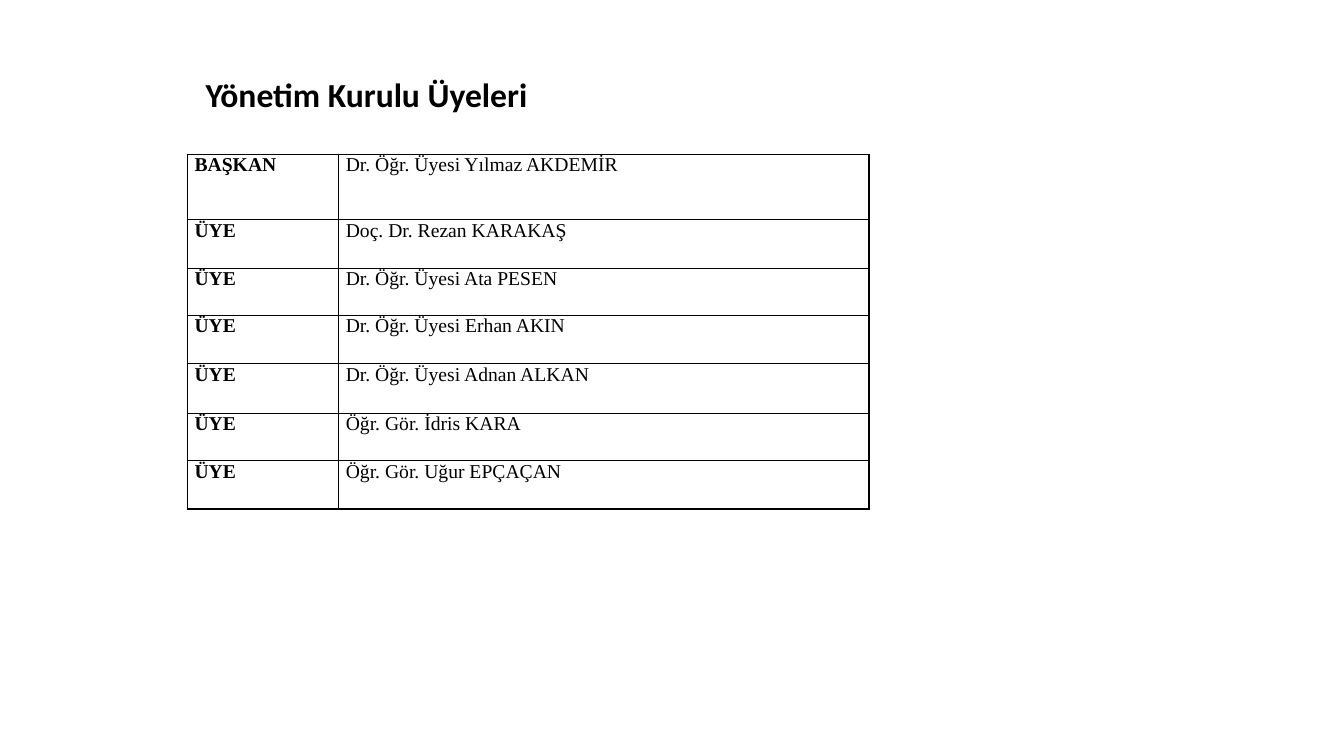
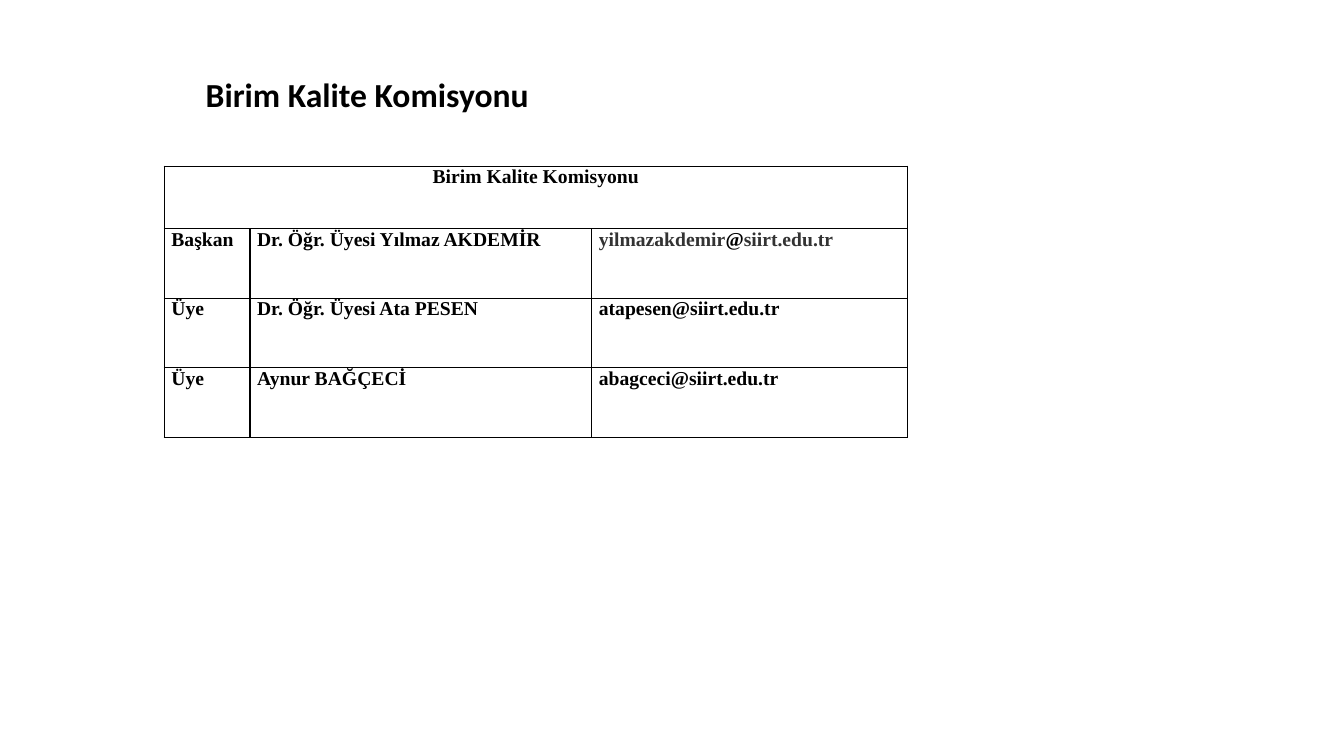
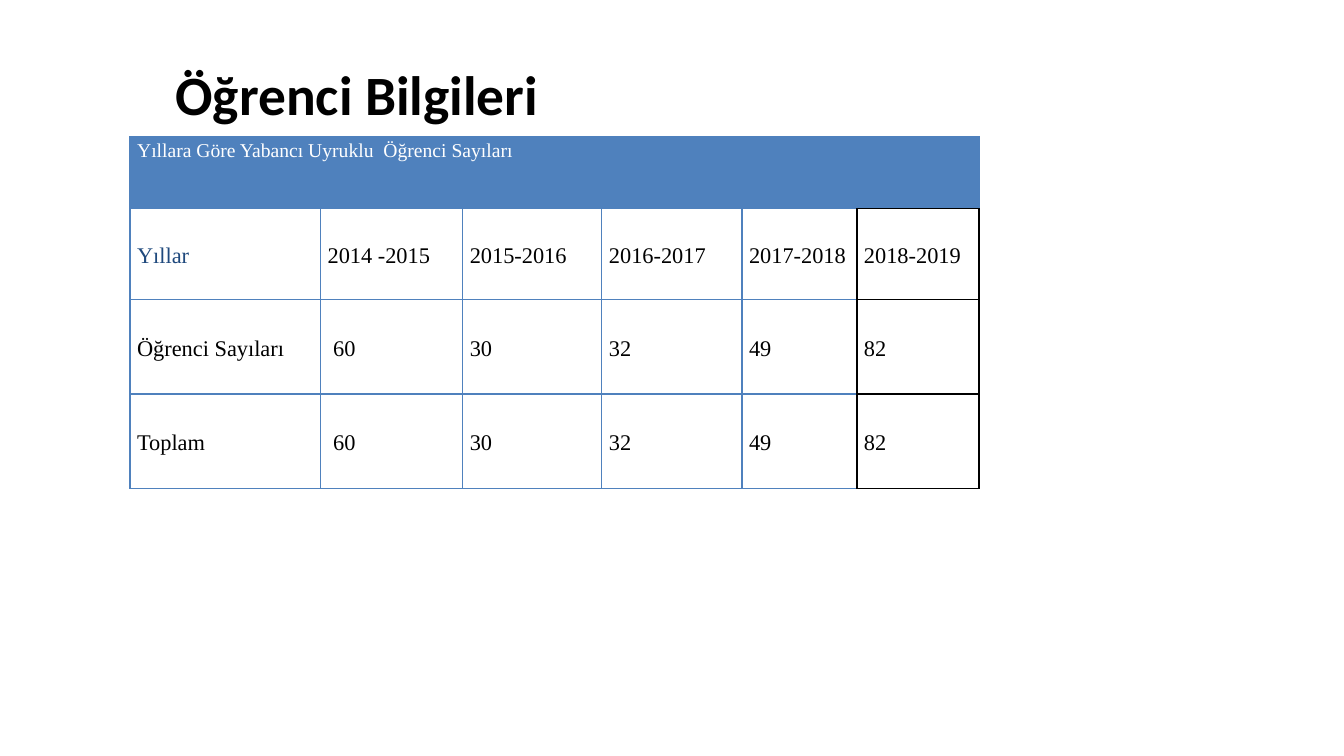
import pptx
import pptx.dml.color
import pptx.enum.text
import pptx.oxml.ns
import pptx.util
from lxml import etree

Inches = pptx.util.Inches
Pt = pptx.util.Pt
Anchor = pptx.enum.text.MSO_ANCHOR
Align = pptx.enum.text.PP_ALIGN

BLACK = "000000"
GRAY = "333333"
WHITE = "FFFFFF"
BLUE = "4F81BD"
NAVY = "1F497D"


def rgb(value):
    return pptx.dml.color.RGBColor.from_string(value)


class Deck:
    title_font = "Calibri"
    table_font = "Times New Roman"
    cell_margin = 0.07

    def __init__(self):
        self.presentation = pptx.Presentation()
        self.presentation.slide_width = Inches(13.33)
        self.presentation.slide_height = Inches(7.5)
        self.slide = None

    def set_font(self, font, name, size, color=BLACK, bold=False):
        font.name = name
        font.size = Pt(size)
        font.bold = bold
        font.color.rgb = rgb(color)

    def add_slide(self, title, box=(1.94, 0.68, 7.4, 0.5), size=24, spacing=1):
        self.slide = self.presentation.slides.add_slide(self.presentation.slide_layouts[5])
        shape = self.slide.shapes.title
        shape.left, shape.top, shape.width, shape.height = map(Inches, box)
        frame = shape.text_frame
        frame.text = title
        frame.word_wrap = True
        frame.auto_size = pptx.enum.text.MSO_AUTO_SIZE.NONE
        frame.vertical_anchor = Anchor.MIDDLE
        paragraph = frame.paragraphs[0]
        paragraph.alignment = Align.LEFT
        paragraph.line_spacing = spacing
        self.set_font(paragraph.font, self.title_font, size, bold=True)

    def add_table(self, left, top, widths, heights, line=BLACK):
        frame = self.slide.shapes.add_table(
            len(heights), len(widths), Inches(left), Inches(top),
            Inches(sum(widths)), Inches(sum(heights)))
        table = frame.table
        table.first_row = False
        table.horz_banding = False
        for column, width in zip(table.columns, widths):
            column.width = Inches(width)
        for row, height in zip(table.rows, heights):
            row.height = Inches(height)
        for cell in table.iter_cells():
            self.set_border(cell, line)
            cell.fill.background()
        return table

    def set_border(self, cell, color, width=1, sides="LRTB"):
        properties = cell._tc.get_or_add_tcPr()
        for side in sides:
            tag = pptx.oxml.ns.qn(f"a:ln{side}")
            edge = properties.find(tag)
            if edge is None:
                edge = etree.SubElement(properties, tag)
            edge.clear()
            edge.set("w", str(Pt(width)))
            fill = etree.SubElement(edge, pptx.oxml.ns.qn("a:solidFill"))
            etree.SubElement(fill, pptx.oxml.ns.qn("a:srgbClr")).set("val", color)

    def fill_cell(self, cell, text, size=14, color=BLACK, bold=False,
                  align=Align.LEFT, anchor=Anchor.TOP, spacing=1):
        cell.margin_left = cell.margin_right = Inches(self.cell_margin)
        cell.margin_top = cell.margin_bottom = 0
        cell.vertical_anchor = anchor
        paragraph = cell.text_frame.paragraphs[0]
        paragraph.alignment = align
        paragraph.line_spacing = spacing
        self.set_font(paragraph.font, self.table_font, size, color, bold)
        parts = [(text, None)] if isinstance(text, str) else text
        for words, part_color in parts:
            run = paragraph.add_run()
            run.text = words
            if part_color:
                run.font.color.rgb = rgb(part_color)


def board_slide(deck):
    deck.add_slide("Yönetim Kurulu Üyeleri")
    members = [
        "Dr. Öğr. Üyesi Yılmaz AKDEMİR", "Doç. Dr. Rezan KARAKAŞ",
        "Dr. Öğr. Üyesi Ata PESEN", "Dr. Öğr. Üyesi Erhan AKIN",
        "Dr. Öğr. Üyesi Adnan ALKAN", "Öğr. Gör. İdris KARA",
        "Öğr. Gör. Uğur EPÇAÇAN",
    ]
    heights = [0.65, 0.48, 0.47, 0.48, 0.49, 0.47, 0.48]
    table = deck.add_table(1.86, 1.53, [1.5, 5.26], heights)
    for row, member in enumerate(members):
        deck.fill_cell(table.cell(row, 0), "ÜYE" if row else "BAŞKAN", bold=True)
        deck.fill_cell(table.cell(row, 1), member)


def quality_slide(deck):
    deck.add_slide("Birim Kalite Komisyonu")
    chair_address = [("yilmazakdemir", GRAY), ("@", BLACK), ("siirt.edu.tr", GRAY)]
    members = [
        ("Başkan", "Dr. Öğr. Üyesi Yılmaz AKDEMİR", chair_address),
        ("Üye", "Dr. Öğr. Üyesi Ata PESEN", "atapesen@siirt.edu.tr"),
        ("Üye", "Aynur BAĞÇECİ", "abagceci@siirt.edu.tr"),
    ]
    table = deck.add_table(1.63, 1.65, [0.85, 3.39, 3.13], [0.62] + [0.69] * 3)
    header = table.cell(0, 0)
    header.merge(table.cell(0, 2))
    deck.fill_cell(header, "Birim Kalite Komisyonu", bold=True, align=Align.CENTER)
    for row, member in enumerate(members, 1):
        for column, text in enumerate(member):
            deck.fill_cell(table.cell(row, column), text, bold=True)


def student_slide(deck):
    deck.add_slide("Öğrenci Bilgileri", (1.64, 0.69, 7.71, 0.55), 39.6, 0.9)
    counts = [" 60", "30", "32", "49", "82"]
    rows = [
        ["Yıllar", "2014 -2015", "2015-2016", "2016-2017", "2017-2018", "2018-2019"],
        ["Öğrenci Sayıları"] + counts,
        ["Toplam"] + counts,
    ]
    widths = [1.89, 1.41, 1.38, 1.39, 1.14, 1.21]
    table = deck.add_table(1.29, 1.36, widths, [0.71, 0.9, 0.94, 0.94], BLUE)
    last = len(widths) - 1
    header = table.cell(0, 0)
    header.merge(table.cell(0, last))
    header.fill.solid()
    header.fill.fore_color.rgb = rgb(BLUE)
    deck.fill_cell(header, "Yıllara Göre Yabancı Uyruklu  Öğrenci Sayıları",
                   color=WHITE, spacing=1.15)
    for row, texts in enumerate(rows, 1):
        for column, text in enumerate(texts):
            color = NAVY if text == "Yıllar" else BLACK
            deck.fill_cell(table.cell(row, column), text, 16, color,
                           anchor=Anchor.MIDDLE, spacing=1.15)
        deck.set_border(table.cell(row, last - 1), BLACK, sides="R")
        deck.set_border(table.cell(row, last), BLACK)
    for column in range(last):
        deck.set_border(table.cell(2, column), BLUE, 2.25, "B")
        deck.set_border(table.cell(3, column), BLUE, 2.25, "T")


def main():
    deck = Deck()
    board_slide(deck)
    quality_slide(deck)
    student_slide(deck)
    deck.presentation.save("out.pptx")


if __name__ == "__main__":
    main()
